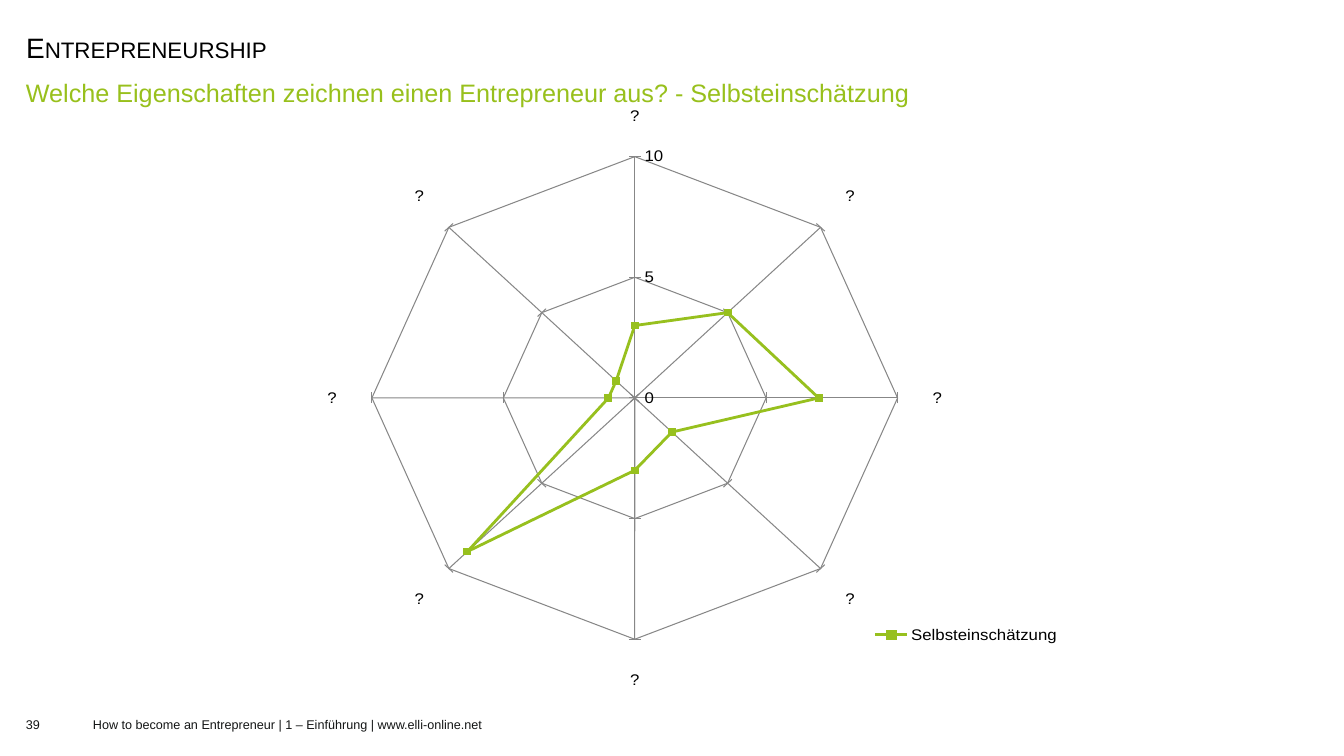
from lxml.etree import SubElement
from pptx import Presentation
from pptx.chart.data import CategoryChartData
from pptx.dml.color import RGBColor
from pptx.enum.chart import XL_CHART_TYPE, XL_LEGEND_POSITION, XL_MARKER_STYLE, XL_TICK_MARK
from pptx.enum.text import MSO_ANCHOR, MSO_AUTO_SIZE, PP_ALIGN
from pptx.oxml import parse_xml
from pptx.oxml.ns import nsdecls, qn
from pptx.util import Pt

PX = 914400 / 100.8
FONT = "Arial"
COLORS = {
    "title": "000000",
    "subtitle": "98C01C",
    "footer": "141616",
    "series": "97C01E",
    "grid": "878787",
}


def px(*lengths):
    return [round(length * PX) for length in lengths]


def rgb(name):
    return RGBColor.from_string(COLORS[name])


def fill_text(shape, text, size, color, anchor, line_spacing=None):
    frame = shape.text_frame
    frame.word_wrap = True
    frame.auto_size = MSO_AUTO_SIZE.NONE
    frame.vertical_anchor = anchor
    paragraph = frame.paragraphs[0]
    paragraph.text = text
    paragraph.alignment = PP_ALIGN.LEFT
    if line_spacing:
        paragraph.line_spacing = line_spacing
    paragraph.font.name = FONT
    paragraph.font.size = Pt(size)
    paragraph.font.color.rgb = rgb(color)
    return paragraph


def add_heading(slide, left, top, width):
    title = slide.shapes.title
    title.left, title.top, title.width, title.height = px(left, top, 944, 39)
    paragraph = fill_text(title, "Entrepreneurship", 20, "title", MSO_ANCHOR.TOP, 1.1)
    paragraph.runs[0].font._element.set("cap", "small")

    subtitle = slide.shapes.add_textbox(*px(left, top + 47, width, 39))
    fill_text(
        subtitle,
        "Welche Eigenschaften zeichnen einen Entrepreneur aus? - Selbsteinschätzung",
        18, "subtitle", MSO_ANCHOR.TOP, 1.1,
    )


def add_footer(slide, left, top, height):
    parts = (
        (0, 50, "39"),
        (67, 539, "How to become an Entrepreneur | 1 – Einführung | www.elli-online.net"),
    )
    for offset, width, text in parts:
        box = slide.shapes.add_textbox(*px(left + offset, top, width, height))
        frame = box.text_frame
        frame.margin_left = frame.margin_right = frame.margin_top = frame.margin_bottom = 0
        fill_text(box, text, 9, "footer", MSO_ANCHOR.MIDDLE)


def set_layout(element, index, x, y, width, height, inner=False):
    """Place a chart part by fractions of the chart's size."""
    for old in element.findall(qn("c:layout")):
        element.remove(old)
    layout = parse_xml(f"<c:layout {nsdecls('c')}/>")
    manual = SubElement(layout, qn("c:manualLayout"))
    settings = [("layoutTarget", "inner")] if inner else []
    settings += [("xMode", "edge"), ("yMode", "edge"),
                 ("x", x), ("y", y), ("w", width), ("h", height)]
    for tag, value in settings:
        SubElement(manual, qn(f"c:{tag}")).set("val", str(value))
    element.insert(index, layout)


def style_line(line, color, width):
    line.color.rgb = rgb(color)
    line.width = Pt(width)


def add_radar(slide, left, top, width, height):
    data = CategoryChartData()
    values = (3, 5, 7, 2, 3, 9, 1, 1)
    data.categories = ["?"] * len(values)
    data.add_series("Selbsteinschätzung", values)
    chart = slide.shapes.add_chart(
        XL_CHART_TYPE.RADAR_MARKERS, *px(left, top, width, height), data
    ).chart
    chart.has_title = False
    chart.font.name = FONT
    chart.font.size = Pt(12)
    chart.font.color.rgb = rgb("title")
    chart.plots[0].vary_by_categories = False
    set_layout(chart._chartSpace.chart.plotArea, 0, 0.23, 0.04, 0.46, 0.91, inner=True)

    chart.value_axis.minimum_scale = 0
    chart.value_axis.maximum_scale = 10
    chart.value_axis.major_unit = 5
    chart.value_axis.tick_labels.number_format = "General"
    chart.value_axis.tick_labels.number_format_is_linked = False
    for axis, tick in ((chart.category_axis, XL_TICK_MARK.OUTSIDE),
                       (chart.value_axis, XL_TICK_MARK.CROSS)):
        axis.has_major_gridlines = True
        axis.major_tick_mark = tick
        axis.minor_tick_mark = XL_TICK_MARK.NONE
        style_line(axis.major_gridlines.format.line, "grid", 0.75)
        style_line(axis.format.line, "grid", 0.75)

    series = chart.plots[0].series[0]
    series.smooth = False
    style_line(series.format.line, "series", 2)
    series.marker.style = XL_MARKER_STYLE.SQUARE
    series.marker.size = 5
    series.marker.format.fill.solid()
    series.marker.format.fill.fore_color.rgb = rgb("series")
    style_line(series.marker.format.line, "series", 0.75)

    chart.has_legend = True
    chart.legend.position = XL_LEGEND_POSITION.BOTTOM
    chart.legend.include_in_layout = False
    set_layout(chart.legend._element, 1, 0.66, 0.91, 0.18, 0.06)


def main():
    presentation = Presentation()
    presentation.slide_width, presentation.slide_height = px(1344, 756)
    slide = presentation.slides.add_slide(presentation.slide_layouts[5])
    add_footer(slide, 26, 705, 38)
    add_heading(slide, 16, 22, 1312)
    add_radar(slide, 109, 108, 1143, 580)
    presentation.save("out.pptx")


if __name__ == "__main__":
    main()
